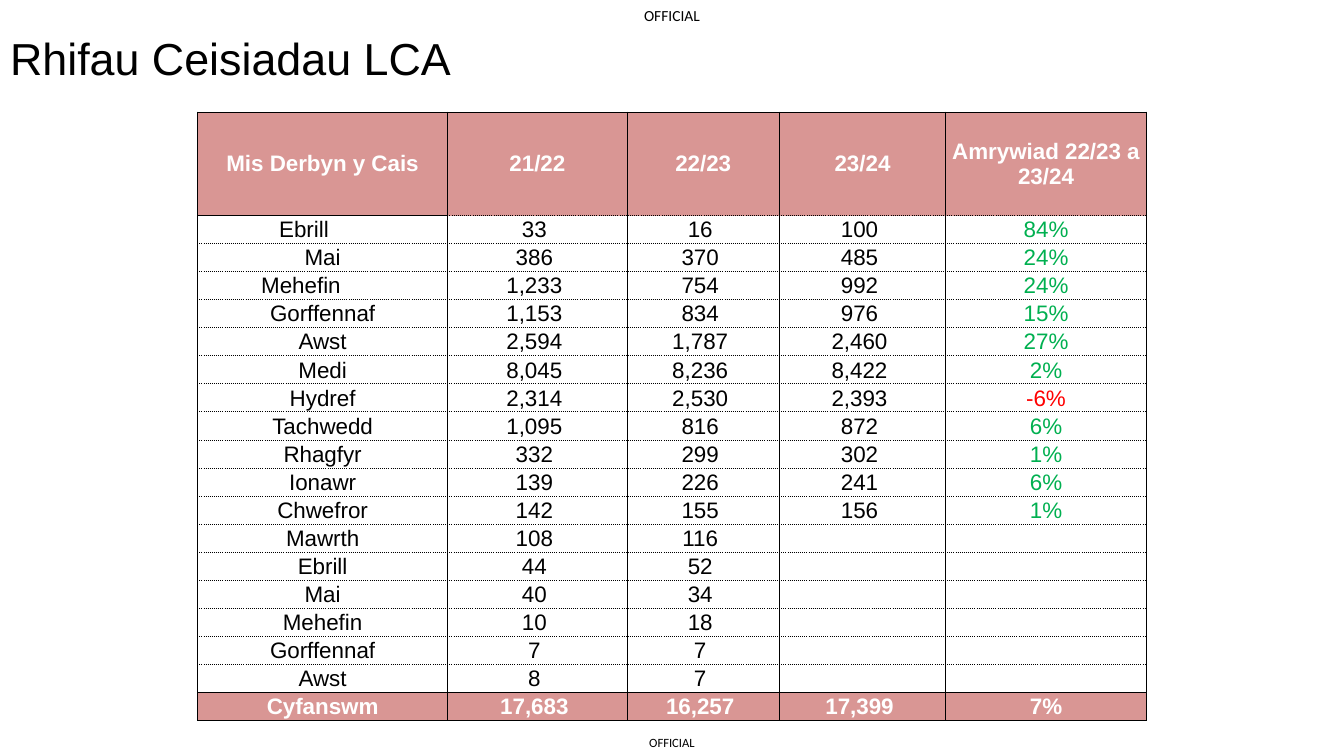
from lxml import etree
from pptx import Presentation
from pptx import util as u
from pptx.dml.color import RGBColor
from pptx.enum import text
from pptx.oxml.ns import qn

COLOURS = {"black": "000000", "white": "FFFFFF", "rose": "D99694",
           "green": "00B050", "red": "FF0000"}
HEADER = ["Mis Derbyn y Cais", "21/22", "22/23", "23/24", "Amrywiad 22/23 a 23/24"]
MONTHS = [
    ["Ebrill", "33", "16", "100", "84%"],
    ["Mai", "386", "370", "485", "24%"],
    ["Mehefin", "1,233", "754", "992", "24%"],
    ["Gorffennaf", "1,153", "834", "976", "15%"],
    ["Awst", "2,594", "1,787", "2,460", "27%"],
    ["Medi", "8,045", "8,236", "8,422", "2%"],
    ["Hydref", "2,314", "2,530", "2,393", "-6%"],
    ["Tachwedd", "1,095", "816", "872", "6%"],
    ["Rhagfyr", "332", "299", "302", "1%"],
    ["Ionawr", "139", "226", "241", "6%"],
    ["Chwefror", "142", "155", "156", "1%"],
    ["Mawrth", "108", "116", "", ""],
    ["Ebrill", "44", "52", "", ""],
    ["Mai", "40", "34", "", ""],
    ["Mehefin", "10", "18", "", ""],
    ["Gorffennaf", "7", "7", "", ""],
    ["Awst", "8", "7", "", ""],
]
TOTAL = ["Cyfanswm", "17,683", "16,257", "17,399", "7%"]
COLUMN_WIDTHS = [2.48, 1.78, 1.51, 1.65, 1.99]
TABLE_HEIGHT, HEADER_HEIGHT, TOTAL_HEIGHT = 6.03, 1.03, 0.27
# Right margins of the month labels that sit left of centre, by row
LABEL_MARGINS = {1: 0.38, 3: 0.44}


def write(frame, words, size=16, font="Arial", colour="black", bold=False,
          align=text.PP_ALIGN.CENTER):
    paragraph = frame.paragraphs[0]
    paragraph.alignment = align
    if not words:
        etree.SubElement(paragraph._p, qn("a:endParaRPr"), sz=str(size * 100))
        return
    run = paragraph.add_run()
    run.text = words
    run.font.size = u.Pt(size)
    run.font.name = font
    run.font.bold = bold
    run.font.color.rgb = RGBColor.from_string(COLOURS[colour])


def add_marking(slide, left, top, width, height, size):
    box = slide.shapes.add_textbox(*map(u.Inches, (left, top, width, height)))
    frame = box.text_frame
    frame.margin_left = frame.margin_right = frame.margin_top = frame.margin_bottom = 0
    frame.word_wrap = True
    frame.vertical_anchor = text.MSO_ANCHOR.MIDDLE
    write(frame, "OFFICIAL", size=size, font="Calibri")


def add_title(slide, words):
    title = slide.shapes.title
    title.left, title.top = u.Inches(0), u.Inches(0.25)
    title.width, title.height = u.Inches(5.39), u.Inches(0.64)
    frame = title.text_frame
    frame.word_wrap = False
    frame.auto_size = text.MSO_AUTO_SIZE.NONE
    frame.vertical_anchor = text.MSO_ANCHOR.TOP
    write(frame, words, size=32, align=text.PP_ALIGN.LEFT)


def set_borders(cell, dotted_sides):
    properties = cell._tc.get_or_add_tcPr()
    for side in "LRTB":
        line = etree.SubElement(properties, qn("a:ln" + side), w=str(u.Pt(0.5)))
        fill = etree.SubElement(line, qn("a:solidFill"))
        etree.SubElement(fill, qn("a:srgbClr"), val=COLOURS["black"])
        dash = "dot" if side in dotted_sides else "solid"
        etree.SubElement(line, qn("a:prstDash"), val=dash)


def find_dotted_sides(row, column, last):
    """Rules between months are dotted, as is the header's foot beyond column one."""
    if row == last:
        return ""
    if row == 0:
        return "B" if column else ""
    top = "" if row == 1 and column == 0 else "T"
    return top + ("" if row == last - 1 else "B")


def find_colour(words, banded):
    if banded:
        return "white"
    if words.endswith("%"):
        return "red" if words.startswith("-") else "green"
    return "black"


def fill_cell(cell, words, row, column, last):
    banded = row in (0, last)
    cell.margin_left = cell.margin_top = u.Inches(0.01)
    cell.margin_bottom = 0
    margin = 0.01
    if column == 0:
        margin = LABEL_MARGINS.get(row, margin)
    elif row and column < 4:
        margin = 0.07
    cell.margin_right = u.Inches(margin)
    cell.vertical_anchor = text.MSO_ANCHOR.MIDDLE
    set_borders(cell, find_dotted_sides(row, column, last))
    if banded:
        cell.fill.solid()
        cell.fill.fore_color.rgb = RGBColor.from_string(COLOURS["rose"])
    else:
        cell.fill.background()
    write(cell.text_frame, words, colour=find_colour(words, banded), bold=banded)


def add_claims_table(slide):
    rows = [HEADER, *MONTHS, TOTAL]
    last = len(rows) - 1
    table = slide.shapes.add_table(
        len(rows), len(HEADER), u.Inches(1.96), u.Inches(1.11),
        u.Inches(sum(COLUMN_WIDTHS)), u.Inches(TABLE_HEIGHT)).table
    table.first_row = table.horz_banding = False
    for column, width in zip(table.columns, COLUMN_WIDTHS):
        column.width = u.Inches(width)
    month_height = (TABLE_HEIGHT - HEADER_HEIGHT - TOTAL_HEIGHT) / len(MONTHS)
    heights = [HEADER_HEIGHT, *[month_height] * len(MONTHS), TOTAL_HEIGHT]
    for row, (values, height) in enumerate(zip(rows, heights)):
        table.rows[row].height = u.Inches(height)
        for column, words in enumerate(values):
            fill_cell(table.cell(row, column), words, row, column, last)


def main():
    presentation = Presentation()
    presentation.slide_width = u.Inches(13.33)
    presentation.slide_height = u.Inches(7.5)
    slide = presentation.slides.add_slide(presentation.slide_layouts[5])
    add_marking(slide, 6.3, 7.23, 0.73, 0.27, size=9)
    add_marking(slide, 6.23, 0, 0.87, 0.31, size=11)
    add_title(slide, "Rhifau Ceisiadau LCA")
    add_claims_table(slide)
    presentation.save("out.pptx")


if __name__ == "__main__":
    main()
